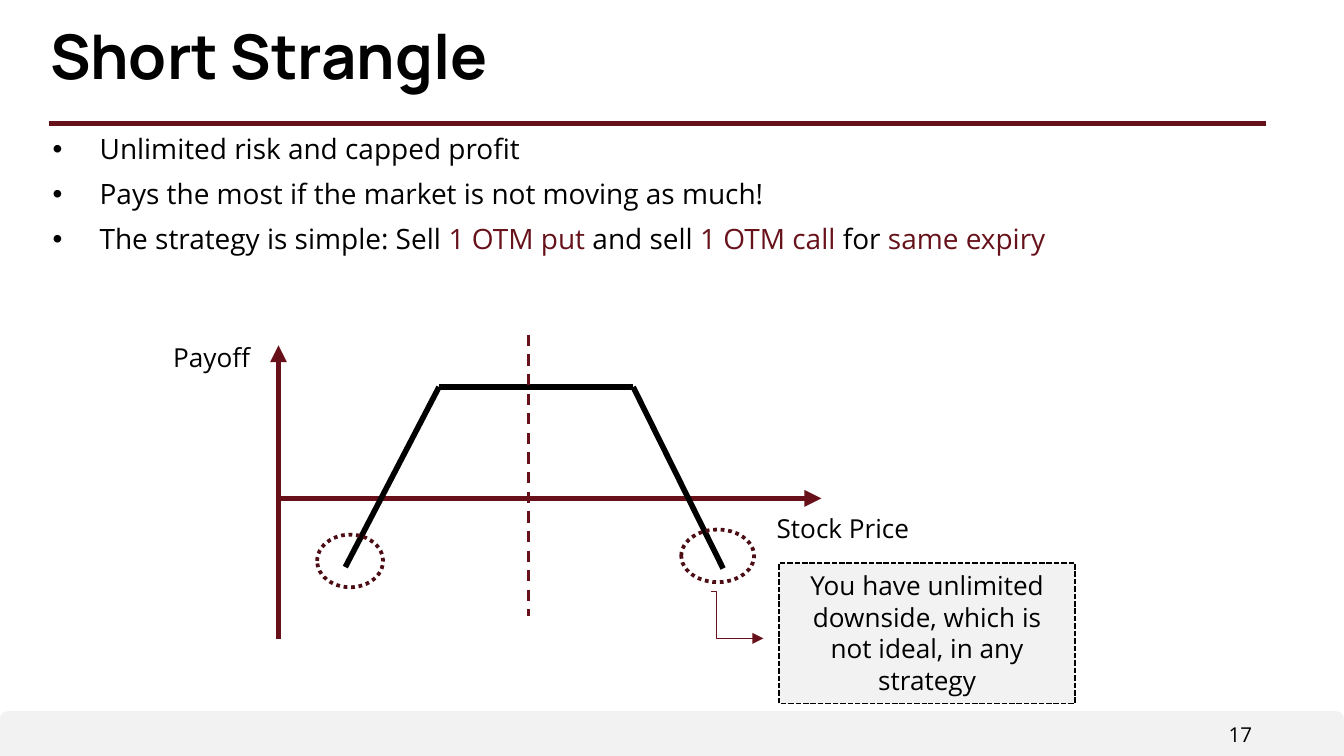
from typing import NamedTuple, Optional

from lxml.etree import SubElement
from pptx import Presentation
from pptx.dml.color import RGBColor
from pptx.enum.dml import MSO_LINE as Dash
from pptx.enum.shapes import MSO_CONNECTOR as Conn, MSO_SHAPE as Form
from pptx.enum.text import MSO_ANCHOR as Anchor, MSO_AUTO_SIZE as Fit, PP_ALIGN as Align
from pptx.oxml.ns import qn
from pptx.util import Pt

BLACK, GREY = "000000", "F2F2F2"
WINE, AXIS, RING = "67121B", "671019", "4C0D14"
SANS, HEAD = "Open Sans", "Manrope"


class Box(NamedTuple):
    x: float
    y: float
    w: float
    h: float


class Stroke(NamedTuple):
    color: str
    width: float
    dash: Optional[Dash] = None


class Line(NamedTuple):
    start: tuple[float, float]
    end: tuple[float, float]
    stroke: Stroke
    arrow: bool = False
    bend: Optional[int] = None  # elbow position, in 1/100000 of the width


class Run(NamedTuple):
    text: str
    color: str = BLACK


class Label(NamedTuple):
    box: Box
    text: str
    size: float = 14
    font: str = SANS
    bold: bool = False
    align: Align = Align.LEFT
    inset: tuple[float, float] = (7.2, 3.6)
    fit: Fit = Fit.SHAPE_TO_FIT_TEXT
    space: float = 1.0


def rgb(code: str) -> RGBColor:
    return RGBColor.from_string(code)


def add_run(para, run: Run, size: float, font: str = SANS, bold: bool = False) -> None:
    part = para.add_run()
    part.text = run.text
    face = part.font
    face.name, face.size, face.bold = font, Pt(size), bold
    face.color.rgb = rgb(run.color)


def set_line(line, stroke: Stroke) -> None:
    line.color.rgb = rgb(stroke.color)
    line.width = Pt(stroke.width)
    if stroke.dash is not None:
        line.dash_style = stroke.dash


def set_frame(frame, inset: tuple[float, float], fit: Fit) -> None:
    frame.word_wrap = True
    frame.auto_size = fit
    frame.margin_left = frame.margin_right = Pt(inset[0])
    frame.margin_top = frame.margin_bottom = Pt(inset[1])


def add_line(slide, item: Line) -> None:
    kind = Conn.STRAIGHT if item.bend is None else Conn.ELBOW
    link = slide.shapes.add_connector(kind, *map(Pt, item.start + item.end))
    set_line(link.line, item.stroke)
    props = link._element.spPr
    if item.arrow:
        SubElement(props.find(qn("a:ln")), qn("a:tailEnd"), type="triangle")
    if item.bend is not None:
        guides = props.find(qn("a:prstGeom")).get_or_add_avLst()
        SubElement(guides, qn("a:gd"), name="adj1", fmla=f"val {item.bend}")
    SubElement(props, qn("a:effectLst"))


def add_form(slide, form: Form, box: Box, fill: Optional[str] = None,
             stroke: Optional[Stroke] = None):
    shape = slide.shapes.add_shape(form, *map(Pt, box))
    shape.shadow.inherit = False
    if fill:
        shape.fill.solid()
        shape.fill.fore_color.rgb = rgb(fill)
    else:
        shape.fill.background()
    if stroke:
        set_line(shape.line, stroke)
    else:
        shape.line.fill.background()
    return shape


def add_label(slide, label: Label) -> None:
    frame = slide.shapes.add_textbox(*map(Pt, label.box)).text_frame
    set_frame(frame, label.inset, label.fit)
    para = frame.paragraphs[0]
    para.alignment, para.line_spacing = label.align, label.space
    add_run(para, Run(label.text), label.size, label.font, label.bold)


def add_list(slide, box: Box, items: list[list[Run]]) -> None:
    frame = slide.shapes.add_textbox(*map(Pt, box)).text_frame
    set_frame(frame, TIGHT, Fit.NONE)
    for i, runs in enumerate(items):
        para = frame.add_paragraph() if i else frame.paragraphs[0]
        para.line_spacing = 0.9
        para.space_before = Pt(8 if i else 0)
        props = para._p.get_or_add_pPr()
        props.set("marL", str(Pt(36)))
        props.set("indent", str(-Pt(25.2)))
        tint = SubElement(props, qn("a:buClr"))
        SubElement(tint, qn("a:srgbClr"), val=BLACK)
        SubElement(props, qn("a:buFont"), typeface="Arial")
        SubElement(props, qn("a:buChar"), char="•")
        for run in runs:
            add_run(para, run, 15)


TIGHT = (5.2, 2.6)
deck = Presentation()
deck.slide_width, deck.slide_height = Pt(720), Pt(405)
slide = deck.slides.add_slide(deck.slide_layouts[6])

# Footer band, page number, title and rule
band = add_form(slide, Form.ROUND_2_SAME_RECTANGLE, Box(0, 381, 720, 24), GREY)
band.adjustments[0] = 0.17
add_label(slide, Label(Box(584.6, 384.2, 91.4, 18), "17", 11, align=Align.RIGHT, inset=TIGHT))
add_line(slide, Line((26, 66.2), (678.2, 66.2), Stroke(WINE, 2.5)))
add_label(slide, Label(Box(21.6, 11.5, 670.3, 49), "Short Strangle", 33, HEAD, True,
                       inset=TIGHT, fit=Fit.NONE, space=0.9))

# Key points
add_list(slide, Box(12.2, 69.8, 670.3, 290.2), [
    [Run("Unlimited risk and capped profit")],
    [Run("Pays the most if the market is not moving as much!")],
    [Run("The strategy is simple: Sell"), Run(" 1 OTM put", WINE), Run(" and sell "),
     Run("1 OTM call ", WINE), Run("for"), Run(" same expiry", WINE)],
])

# Axes with their names
axis = Stroke(AXIS, 3)
add_line(slide, Line((149.2, 342.6), (149.2, 185), axis, arrow=True))
add_line(slide, Line((149.8, 267), (440, 267), axis, arrow=True))
add_label(slide, Label(Box(409, 270.7, 139.7, 24.5), "Stock Price"))
add_label(slide, Label(Box(85.7, 179.3, 63.4, 24.5), "Payoff"))

# Payoff curve and its centre line
curve = [(185, 303.8), (235.2, 207.3), (339.2, 207.3), (387.4, 304.6)]
for start, end in zip(curve, curve[1:]):
    add_line(slide, Line(start, end, Stroke(BLACK, 3)))
add_line(slide, Line((283, 179.3), (283, 329.8), Stroke(AXIS, 1.5, Dash.DASH)))

# Rings around the open ends
for ring in (Box(169.9, 286.4, 35.3, 28.2), Box(365, 283.7, 39, 28.2)):
    add_form(slide, Form.OVAL, ring, stroke=Stroke(RING, 2, Dash.ROUND_DOT))

# Callout on the downside
note = add_form(slide, Form.RECTANGLE, Box(417.4, 301.7, 158.6, 75.2), GREY,
                Stroke(BLACK, 1, Dash.SQUARE_DOT))
frame = note.text_frame
set_frame(frame, (7.2, 3.6), Fit.SHAPE_TO_FIT_TEXT)
frame.vertical_anchor = Anchor.TOP
frame.paragraphs[0].alignment = Align.CENTER
add_run(frame.paragraphs[0],
        Run("You have unlimited downside, which is not ideal, in any strategy"), 14)
add_line(slide, Line((381, 316.8), (409, 342), Stroke(AXIS, 0.75), arrow=True, bend=10700))

deck.save("out.pptx")
